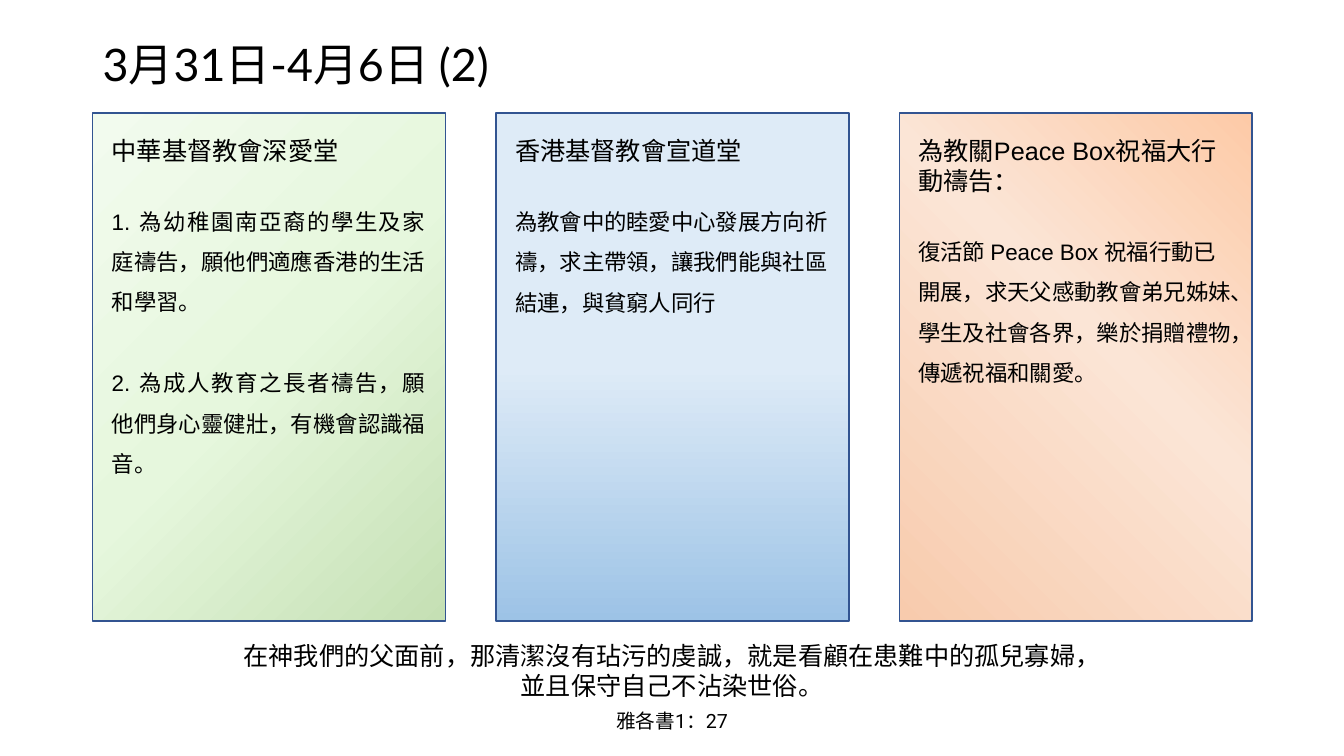
from copy import deepcopy

from pptx import Presentation
from pptx.dml.color import RGBColor
from pptx.enum.shapes import MSO_SHAPE
from pptx.enum.text import MSO_ANCHOR, PP_ALIGN
from pptx.oxml.ns import qn
from pptx.util import Inches, Pt

RECTANGLE = MSO_SHAPE.RECTANGLE
TOP, MIDDLE, BOTTOM = MSO_ANCHOR.TOP, MSO_ANCHOR.MIDDLE, MSO_ANCHOR.BOTTOM
LEFT, CENTER, JUSTIFY = PP_ALIGN.LEFT, PP_ALIGN.CENTER, PP_ALIGN.JUSTIFY

COLORS = {
    "text": "000000",
    "outline": "325491",
    "green dark": "C5E0B4", "green mid": "E6F7DD", "green light": "F2FBEE",
    "blue dark": "9DC3E6", "blue mid": "DEEBF7", "blue light": "DCEBF8",
    "orange dark": "F8CBAD", "orange mid": "FBE5D6", "orange light": "FDCAA7",
}

# Each card: colour name, gradient angle, middle stop, alignment, heading, prayers
CARDS = [
    ("green", 135, 0.5, JUSTIFY, "中華基督教會深愛堂", [
        "1. 為幼稚園南亞裔的學生及家庭禱告，願他們適應香港的生活和學習。",
        "2. 為成人教育之長者禱告，願他們身心靈健壯，有機會認識福音。"]),
    ("blue", 90, 0.5, LEFT, "香港基督教會宣道堂", [
        "為教會中的睦愛中心發展方向祈禱，求主帶領，讓我們能與社區結連，與貧窮人同行"]),
    ("orange", 45, 0.57, LEFT, "為教關Peace Box祝福大行動禱告：", [
        "復活節 Peace Box 祝福行動已開展，求天父感動教會弟兄姊妹、"
        "學生及社會各界，樂於捐贈禮物，傳遞祝福和關愛。"]),
]


def add_text(left, top, width, height, anchor=TOP):
    frame = page.shapes.add_textbox(
        Inches(left), Inches(top), Inches(width), Inches(height)).text_frame
    frame.word_wrap = True
    frame.vertical_anchor = anchor
    return frame


def write(paragraph, text, font, size, alignment=LEFT):
    paragraph.text = text
    paragraph.alignment = alignment
    for span in paragraph.runs:
        span.font.name = font
        span.font.size = Pt(size)
        span.font.color.rgb = RGBColor.from_string(COLORS["text"])


deck = Presentation()
deck.slide_width, deck.slide_height = Inches(13.33), Inches(7.5)
page = deck.slides.add_slide(deck.slide_layouts[6])

# Title
title = add_text(0.92, 0.3, 6.56, 0.72, MIDDLE).paragraphs[0]
write(title, "3月31日-4月6日 (2)", "Lato", 32)
title.line_spacing = 0.9

# Prayer cards
for index, (color, angle, middle, alignment, heading, prayers) in enumerate(CARDS):
    left = 0.92 + 4 * index
    card = page.shapes.add_shape(
        RECTANGLE, Inches(left), Inches(1.12), Inches(3.5), Inches(5.04))
    card.shadow.inherit = False
    card.line.color.rgb = RGBColor.from_string(COLORS["outline"])
    card.line.width = Pt(1)

    # Three-stop gradient
    card.fill.gradient()
    card.fill.gradient_angle = angle
    stop_list = card._element.spPr.find(qn("a:gradFill")).find(qn("a:gsLst"))
    stop_list.append(deepcopy(stop_list[-1]))
    shades = [("dark", 0), ("mid", middle), ("light", 1)]
    for stop, (shade, position) in zip(card.fill.gradient_stops, shades):
        stop.color.rgb = RGBColor.from_string(COLORS[f"{color} {shade}"])
        stop.position = position

    # Heading and prayers
    frame = add_text(left + 0.09, 1.29, 3.31, 3.49)
    write(frame.paragraphs[0], heading, "Arial", 18)
    for number, prayer in enumerate(prayers):
        paragraph = frame.add_paragraph()
        write(paragraph, prayer, "Arial", 16, alignment)
        paragraph.line_spacing = 1.5
        paragraph.space_before = Pt(29 if number else 21)

# Bible verse
verse = add_text(2.11, 6.29, 9.11, 1.03, BOTTOM)
write(verse.paragraphs[0],
      "在神我們的父面前，那清潔沒有玷污的虔誠，就是看顧在患難中的孤兒寡婦，\n"
      "並且保守自己不沾染世俗。", "Roboto", 18, CENTER)
verse.paragraphs[0].space_after = Pt(6)
write(verse.add_paragraph(), "雅各書1：27", "Roboto", 14, CENTER)

deck.save("out.pptx")
